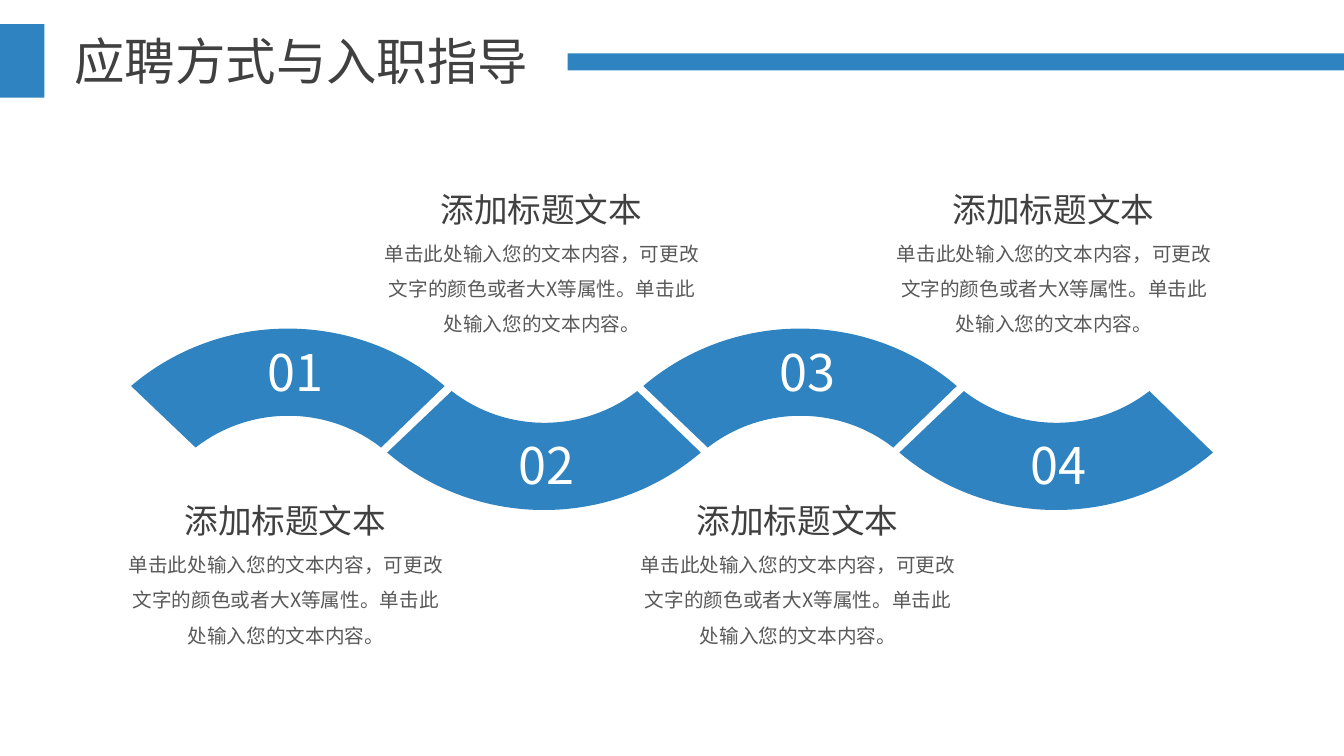
import pptx
import pptx.dml.color
import pptx.enum.shapes
import pptx.enum.text
import pptx.oxml.ns
import pptx.util
from lxml import etree

Inches = pptx.util.Inches
qn = pptx.oxml.ns.qn
FONT = "Noto Sans CJK SC"
BLUE, WHITE, DARK, GRAY = "2E83C0", "FFFFFF", "404040", "595959"
CAPTION_TITLE = "添加标题文本"
CAPTION_BODY = "单击此处输入您的文本内容，可更改文字的颜色或者大X等属性。单击此处输入您的文本内容。"
STEP = 2.54


def paint(shape, color):
    shape.shadow.inherit = False
    shape.fill.solid()
    shape.fill.fore_color.rgb = pptx.dml.color.RGBColor.from_string(color)
    shape.line.fill.background()


def add_bar(page, left, top, width, height):
    bar = page.shapes.add_shape(
        pptx.enum.shapes.MSO_SHAPE.RECTANGLE,
        Inches(left), Inches(top), Inches(width), Inches(height))
    paint(bar, BLUE)


def add_text(page, text, place, size, color, centered=True, inset=True, spacing=None):
    box = page.shapes.add_textbox(*[Inches(length) for length in place])
    frame = box.text_frame
    frame.word_wrap = True
    frame.auto_size = pptx.enum.text.MSO_AUTO_SIZE.SHAPE_TO_FIT_TEXT
    if not inset:
        frame.margin_left = frame.margin_right = 0
        frame.margin_top = frame.margin_bottom = 0
    para = frame.paragraphs[0]
    para.text = text
    if centered:
        para.alignment = pptx.enum.text.PP_ALIGN.CENTER
    if spacing:
        para.line_spacing = spacing
    para.font.size = pptx.util.Pt(size)
    para.font.color.rgb = pptx.dml.color.RGBColor.from_string(color)
    para.font.name = FONT
    defaults = para._p.pPr.find(qn("a:defRPr"))
    etree.SubElement(defaults, qn("a:ea"), typeface=FONT)


def bend_segments(shape):
    lines = list(shape._element.iter(qn("a:lnTo")))
    for first in range(0, len(lines), 3):
        curve = etree.Element(qn("a:cubicBezTo"))
        lines[first].addprevious(curve)
        for line in lines[first:first + 3]:
            curve.append(line[0])
            line.getparent().remove(line)


def add_arch(page, left, edge, direction):
    outer_right, inner_right = (3.11, 0), (2.48, 0.61)
    inner_left, outer_left = (0.64, 0.61), (0, 0)
    outline = [
        outer_right,
        inner_right, inner_right, inner_right,
        (1.94, 0.19), (1.18, 0.19), inner_left,
        outer_left, outer_left, outer_left,
        (0.89, -0.76), (2.22, -0.76), outer_right,
    ]
    points = [(Inches(left + x), Inches(edge + direction * y)) for x, y in outline]
    builder = page.shapes.build_freeform(*points[0])
    builder.add_line_segments(points[1:], close=True)
    arch = builder.convert_to_shape()
    bend_segments(arch)
    paint(arch, BLUE)


def add_caption(page, left, top):
    add_text(page, CAPTION_TITLE, (left + 0.54, top, 2.06, 0.4), 24, DARK, inset=False)
    add_text(page, CAPTION_BODY, (left, top + 0.41, 3.15, 1.06), 14, GRAY,
             inset=False, spacing=1.5)


def add_step(page, index):
    left = 1.3 + STEP * index
    if index % 2 == 0:
        edge, direction, number_shift, number_top, caption_top = 3.83, 1, 1.16, 3.33, 4.96
    else:
        edge, direction, number_shift, number_top, caption_top = 4.49, -1, 1.11, 4.26, 1.87
    add_arch(page, left, edge, direction)
    add_text(page, f"{index + 1:02d}", (left + number_shift, number_top, 0.94, 0.71), 36, WHITE)
    add_caption(page, left - 0.04, caption_top)


def main():
    deck = pptx.Presentation()
    deck.slide_width = Inches(13.33)
    deck.slide_height = Inches(7.5)
    page = deck.slides.add_slide(deck.slide_layouts[6])
    add_bar(page, 5.63, 0.53, 7.7, 0.17)
    add_text(page, "应聘方式与入职指导", (0.64, 0.25, 4.79, 0.71), 36, DARK, centered=False)
    add_bar(page, 0, 0.24, 0.44, 0.73)
    for index in range(4):
        add_step(page, index)
    deck.save("out.pptx")


if __name__ == "__main__":
    main()
